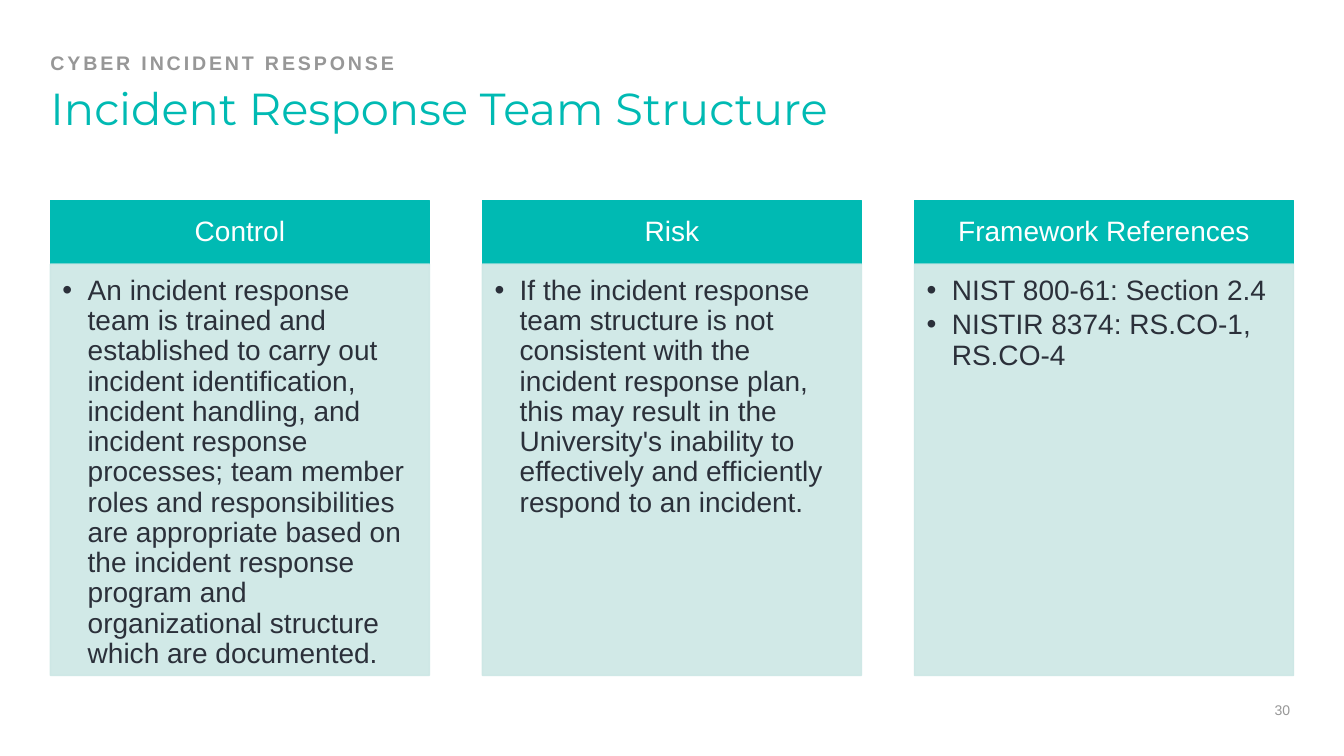
from lxml import etree
from pptx import Presentation
from pptx.dml.color import RGBColor
from pptx.enum.shapes import MSO_SHAPE
from pptx.enum.text import MSO_ANCHOR, MSO_AUTO_SIZE, PP_ALIGN
from pptx.oxml.ns import qn
from pptx.util import Inches, Pt

RECT = MSO_SHAPE.RECTANGLE
TOP, MIDDLE, BOTTOM = MSO_ANCHOR.TOP, MSO_ANCHOR.MIDDLE, MSO_ANCHOR.BOTTOM
LEFT, CENTER = PP_ALIGN.LEFT, PP_ALIGN.CENTER
FIXED = MSO_AUTO_SIZE.NONE

COLORS = {"teal": "00BAB3", "pale": "CCE7E5", "ink": "2B303A",
          "gray": "979797", "white": "FFFFFF"}

CARDS = [
    ("Control", ["An incident response team is trained and established to carry out "
                 "incident identification, incident handling, and incident response "
                 "processes; team member roles and responsibilities are appropriate "
                 "based on the incident response program and organizational structure "
                 "which are documented."]),
    ("Risk", ["If the incident response team structure is not consistent with the "
              "incident response plan, this may result in the University's inability "
              "to effectively and efficiently respond to an incident."]),
    ("Framework References", ["NIST 800-61: Section 2.4",
                              "NISTIR 8374: RS.CO-1, RS.CO-4"]),
]


def rgb(name):
    return RGBColor.from_string(COLORS[name])


def add_bullet(para):
    props = para._p.get_or_add_pPr()
    props.set("marL", str(Inches(0.25)))
    props.set("indent", str(-Inches(0.25)))
    etree.SubElement(props, qn("a:buFont")).set("typeface", "Arial")
    etree.SubElement(props, qn("a:buChar")).set("char", "•")


def write(shape, lines, size=20, color="ink", font="Arial", bold=False, align=LEFT,
          anchor=TOP, insets=(0, 0, 0, 0), bullet=False, after=0, track=0):
    frame = shape.text_frame
    frame.word_wrap = True
    frame.auto_size = FIXED
    frame.vertical_anchor = anchor
    (frame.margin_left, frame.margin_top,
     frame.margin_right, frame.margin_bottom) = map(Inches, insets)
    for i, line in enumerate(lines):
        para = frame.add_paragraph() if i else frame.paragraphs[0]
        if bullet:
            add_bullet(para)
        para.alignment = align
        para.line_spacing = 0.9
        para.space_before = Pt(0)
        para.space_after = Pt(after)
        run = para.add_run()
        run.text = line
        run.font.name = font
        run.font.size = Pt(size)
        run.font.bold = bold
        run.font.color.rgb = rgb(color)
        if track:
            run._r.get_or_add_rPr().set("spc", str(track * 100))


def add_text(slide, box, text, **style):
    write(slide.shapes.add_textbox(*map(Inches, box)), [text], **style)


def add_panel(slide, box, color, alpha=100):
    panel = slide.shapes.add_shape(RECT, *map(Inches, box))
    panel.shadow.inherit = False
    panel.fill.solid()
    panel.fill.fore_color.rgb = rgb(color)
    panel.line.color.rgb = rgb(color)
    panel.line.width = Pt(1)
    if alpha < 100:
        for tone in panel._element.spPr.iter(qn("a:srgbClr")):
            etree.SubElement(tone, qn("a:alpha")).set("val", str(alpha * 1000))
    return panel


def add_head(slide, left, top, width):
    add_text(slide, (left, top, width, 0.21), "CYBER INCIDENT RESPONSE",
             size=14, color="gray", bold=True, anchor=BOTTOM, track=2)
    title = slide.shapes.title
    title.left, title.top = Inches(left), Inches(top + 0.23)
    title.width, title.height = Inches(width), Inches(0.59)
    write(title, ["Incident Response Team Structure"], size=32, color="teal",
          font="Montserrat", insets=(0, 0.1, 0, 0))


def add_card(slide, left, top, width, height, label, points):
    cap = 0.63
    head = add_panel(slide, (left, top, width, cap), "teal")
    write(head, [label], color="white", align=CENTER, anchor=MIDDLE,
          insets=(0.16, 0.09, 0.16, 0.09))
    body = add_panel(slide, (left, top + cap, width, height - cap), "pale", alpha=90)
    write(body, points, insets=(0.12, 0.12, 0.16, 0.17), bullet=True, after=3)


def add_cards(slide, left, top, width, height):
    wide = 3.76
    step = (width - wide) / (len(CARDS) - 1)
    for i, (label, points) in enumerate(CARDS):
        add_card(slide, left + i * step, top, wide, height, label, points)


def main():
    deck = Presentation()
    deck.slide_width, deck.slide_height = Inches(13.33), Inches(7.5)
    slide = deck.slides.add_slide(deck.slide_layouts[5])
    add_head(slide, 0.5, 0.53, 12.33)
    add_cards(slide, 0.5, 1.99, 12.33, 4.71)
    add_text(slide, (12.52, 6.97, 0.4, 0.17), "30", size=10, color="gray",
             align=CENTER, anchor=MIDDLE)
    deck.save("out.pptx")


if __name__ == "__main__":
    main()
